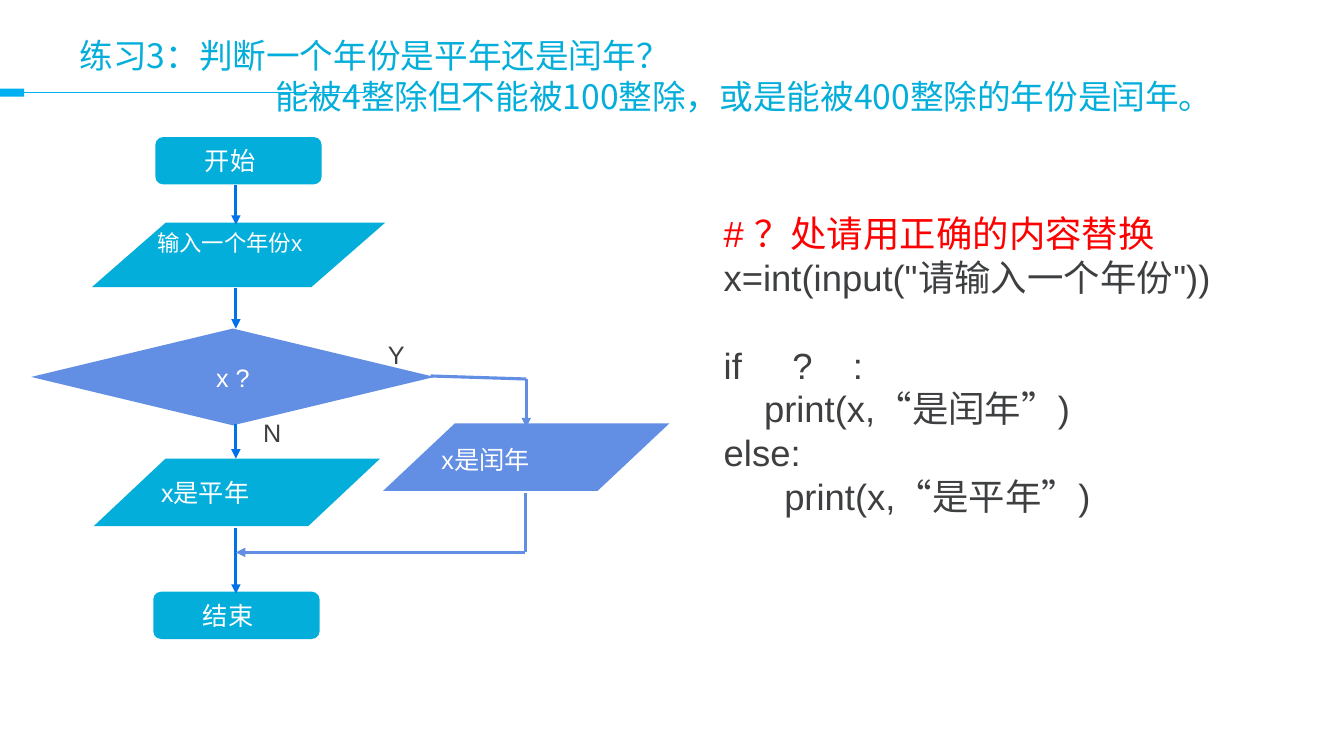
from lxml.etree import SubElement
from pptx import Presentation
from pptx.dml.color import RGBColor
from pptx.enum.shapes import MSO_CONNECTOR, MSO_SHAPE
from pptx.enum.text import MSO_ANCHOR, MSO_AUTO_SIZE, PP_ALIGN
from pptx.oxml.ns import qn
from pptx.util import Inches, Pt

CYAN = RGBColor(0x04, 0xAE, 0xDA)
SKY = RGBColor(0x00, 0xB0, 0xF0)
BLUE = RGBColor(0x00, 0x72, 0xEA)
PERIWINKLE = RGBColor(0x62, 0x8E, 0xE3)
RED = RGBColor(0xFF, 0x00, 0x00)
INK = RGBColor(0x3D, 0x3F, 0x41)
WHITE = RGBColor(0xFF, 0xFF, 0xFF)
CJK_FONT = "Noto Sans CJK SC"


def assign(target, formats):
    """Set every attribute in formats on target."""
    for attribute, value in formats.items():
        setattr(target, attribute, value)


class Flowchart:
    """Draws on a slide divided into tenth-inch columns and rows."""

    CELL = 0.1
    LINE_HEIGHT = 1.2
    FRAME = {"word_wrap": True, "auto_size": MSO_AUTO_SIZE.NONE,
             "vertical_anchor": MSO_ANCHOR.MIDDLE,
             "margin_left": Inches(0.1), "margin_right": Inches(0.1),
             "margin_top": Inches(0.05), "margin_bottom": Inches(0.05)}

    def __init__(self, slide):
        """Keep the slide to draw on."""
        self.slide = slide

    def cells(self, *counts):
        """Convert counts of grid cells to lengths."""
        return [Inches(count * self.CELL) for count in counts]

    def label(self, shape, lines, size=18, color=WHITE, font="Arial",
              align=PP_ALIGN.LEFT, **frame):
        """Fill a shape with evenly spaced lines and return the paragraphs."""
        assign(shape.text_frame, {**self.FRAME, **frame})
        shape.text_frame.text = "\n".join(lines)
        paragraphs = shape.text_frame.paragraphs
        for paragraph in paragraphs:
            assign(paragraph, {"alignment": align, "space_before": Pt(0),
                               "line_spacing": Pt(size * self.LINE_HEIGHT)})
            for run in paragraph.runs:
                assign(run.font, {"name": font, "size": Pt(size)})
                run.font.color.rgb = color
                SubElement(run.font._element, qn("a:ea"), typeface=CJK_FONT)
        return paragraphs

    def title(self, area, question, rule, rule_indent):
        """Place the title with its second line indented."""
        heading = self.slide.shapes.title
        heading._element.getparent().append(heading._element)
        bounds = zip(("left", "top", "width", "height"), self.cells(*area))
        assign(heading, dict(bounds))
        paragraphs = self.label(heading, [question, rule], 24, CYAN, CJK_FONT)
        properties = paragraphs[1]._p.get_or_add_pPr()
        properties.set("marL", str(self.cells(rule_indent)[0]))
        properties.set("indent", "0")

    def block(self, kind, area, fill, slant=None):
        """Add a filled shape without an outline."""
        block = self.slide.shapes.add_shape(kind, *self.cells(*area))
        block.shadow.inherit = False
        block.fill.solid()
        block.fill.fore_color.rgb = fill
        block.line.fill.background()
        if slant is not None:
            block.adjustments[0] = slant
        return block

    def text(self, area, *lines, **formats):
        """Add a text box and return its paragraphs."""
        box = self.slide.shapes.add_textbox(*self.cells(*area))
        return self.label(box, lines, **formats)

    def line(self, start, end, color, width=2.25, arrow=True):
        """Add a straight line, with an arrowhead at its end if asked."""
        link = self.slide.shapes.add_connector(
            MSO_CONNECTOR.STRAIGHT, *self.cells(*start, *end))
        link.line.color.rgb = color
        link.line.width = Pt(width)
        if arrow:
            SubElement(link.line._get_or_add_ln(), qn("a:tailEnd"), type="triangle")
        SubElement(link._element.spPr, qn("a:effectLst"))


def main():
    """Build the leap-year exercise slide."""
    deck = Presentation()
    assign(deck, {"slide_width": Inches(13.33), "slide_height": Inches(7.5)})
    chart = Flowchart(deck.slides.add_slide(deck.slide_layouts[5]))

    chart.line((36.2, 9.2), (2.3, 9.2), SKY, 0.75, arrow=False)
    chart.block(MSO_SHAPE.RECTANGLE, (0, 8.8, 2.4, 0.8), SKY)
    chart.title((6.9, 2.8, 120, 9.4), "练习3：判断一个年份是平年还是闰年？",
                "能被4整除但不能被100整除，或是能被400整除的年份是闰年。", 19.4)

    code = chart.text(
        (70.8, 20.5, 53.4, 31.6), "# ？处请用正确的内容替换",
        "x=int(input(\"请输入一个年份\"))", "if     ?    :",
        "    print(x,“是闰年”)", "else:", "      print(x,“是平年”)",
        size=26, color=INK, vertical_anchor=MSO_ANCHOR.TOP)
    code[0].runs[0].font.color.rgb = RED
    code[2].space_before = code[2].line_spacing

    for area, fill, slant, label_area, label, size in (
            ((9.1, 22.1, 29.1, 6.4), CYAN, 1.145, (14.6, 22.2, 20.8, 3.7), "输入一个年份x", 16),
            ((9.3, 45.5, 28.4, 6.7), CYAN, 1.063, (15, 46.9, 19.5, 4), "x是平年", 18),
            ((38, 42, 28.4, 6.7), PERIWINKLE, 1.063, (42.8, 43.6, 20.9, 4), "x是闰年", 18)):
        chart.block(MSO_SHAPE.PARALLELOGRAM, area, fill, slant)
        chart.text(label_area, label, size=size)

    for left, top, label in ((15.4, 13.6, "开始"), (15.2, 58.7, "结束")):
        terminal = chart.block(MSO_SHAPE.ROUNDED_RECTANGLE, (left, top, 16.5, 4.7), CYAN)
        chart.label(terminal, [label], margin_left=Inches(0.47))

    decision = chart.block(MSO_SHAPE.FLOWCHART_DECISION, (3.1, 32.6, 40, 9.6), PERIWINKLE)
    chart.label(decision, ["x ?"], align=PP_ALIGN.CENTER, word_wrap=False)
    for left, top, answer in ((37.4, 33.3, "Y"), (25.1, 41, "N")):
        chart.text((left, top, 3.8, 3.8), answer, color=INK,
                   align=PP_ALIGN.CENTER, word_wrap=False)

    for top, bottom in ((18.4, 22.3), (28.6, 32.6), (42.1, 45.5), (52.4, 58.9)):
        chart.line((23.4, top), (23.4, bottom), BLUE)
    for start, end, arrow in (
            ((42.7, 37.3), (52.2, 37.6), False), ((52.2, 37.6), (52.2, 42.4), True),
            ((52.1, 48.9), (52.1, 54.8), False), ((52.1, 54.8), (23.4, 54.8), True)):
        chart.line(start, end, PERIWINKLE, arrow=arrow)

    deck.save("out.pptx")


if __name__ == "__main__":
    main()
